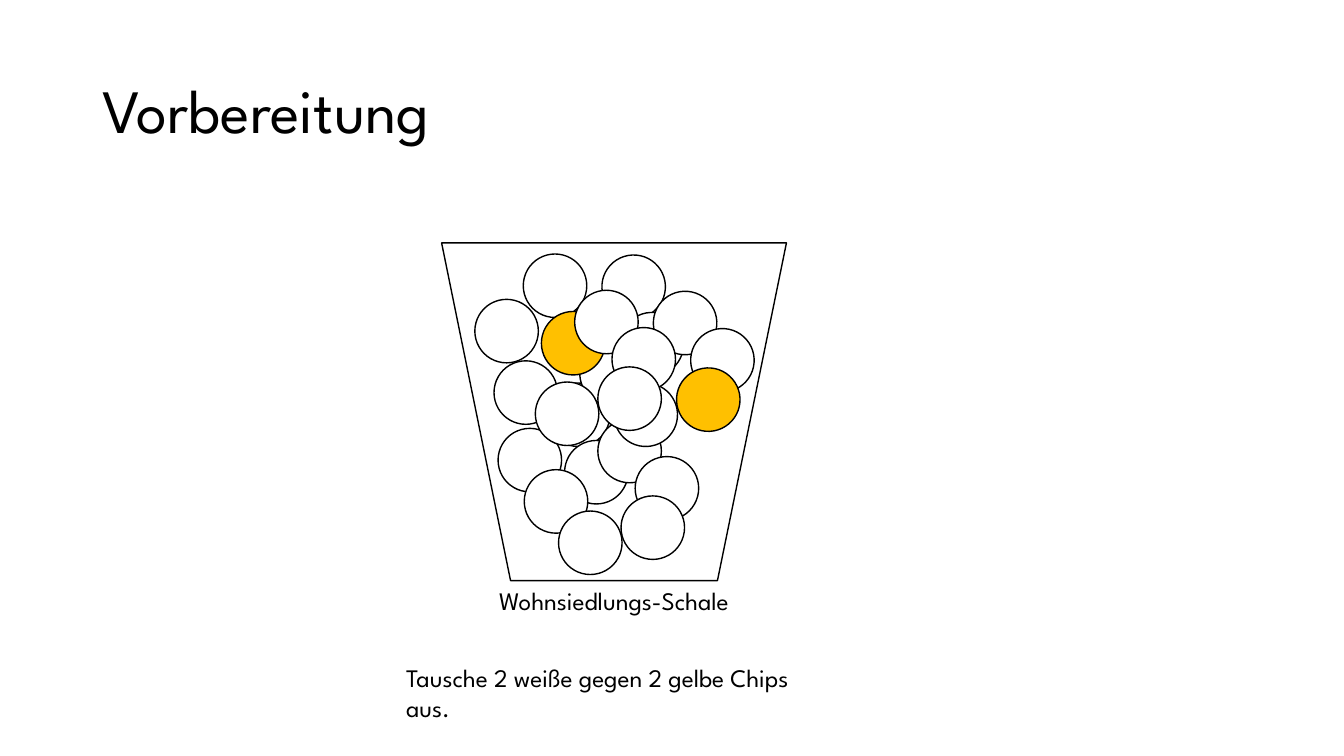
from dataclasses import dataclass

from pptx import Presentation
from pptx.dml.color import RGBColor
from pptx.enum.shapes import MSO_SHAPE
from pptx.enum.text import MSO_ANCHOR, PP_ALIGN
from pptx.util import Inches, Pt


@dataclass(frozen=True)
class Theme:
    """Colours, font and sizes of the slide."""
    ink: RGBColor = RGBColor(0x00, 0x00, 0x00)
    white: RGBColor = RGBColor(0xFF, 0xFF, 0xFF)
    yellow: RGBColor = RGBColor(0xFF, 0xC0, 0x00)
    font: str = "League Spartan"
    title_size: int = 44
    body_size: int = 18
    outline: int = 1


THEME = Theme()
CHIP_SIZE = 0.63
CLUSTER = [(0.48, 0), (0, 0.45), (0.66, 0.57), (0.99, 0.36),
           (0.26, 0.86), (1.36, 0.73), (1.22, 1.12), (0.6, 1.27)]
FRONT_CLUSTER = CLUSTER[:4] + [(0.19, 1.06)] + CLUSTER[5:]


def add_label(slide, box, words, size, align=PP_ALIGN.LEFT,
              anchor=MSO_ANCHOR.TOP, spacing=None):
    """Write one wrapped paragraph into the box."""
    frame = slide.shapes.add_textbox(*map(Inches, box)).text_frame
    frame.word_wrap = True
    frame.vertical_anchor = anchor
    paragraph = frame.paragraphs[0]
    paragraph.alignment = align
    paragraph.line_spacing = spacing
    run = paragraph.add_run()
    run.text = words
    run.font.name = THEME.font
    run.font.size = Pt(size)
    run.font.color.rgb = THEME.ink


def add_outlined(slide, kind, box, fill=None):
    """Draw a thinly outlined shape, filled only if a colour is given."""
    outlined = slide.shapes.add_shape(kind, *map(Inches, box))
    outlined.shadow.inherit = False
    if fill is None:
        outlined.fill.background()
    else:
        outlined.fill.solid()
        outlined.fill.fore_color.rgb = fill
    outlined.line.color.rgb = THEME.ink
    outlined.line.width = Pt(THEME.outline)
    return outlined


def add_chips(slide, left, top, offsets, yellow_chip=None, rotation=0):
    """Heap one cluster of chips from its top left corner."""
    for number, (dx, dy) in enumerate(offsets):
        colour = THEME.yellow if number == yellow_chip else THEME.white
        chip = add_outlined(slide, MSO_SHAPE.OVAL,
                            (left + dx, top + dy, CHIP_SIZE, CHIP_SIZE), colour)
        chip.rotation = rotation


def add_bowl(slide, box):
    """Draw the bowl, its three clusters of chips and its caption."""
    left, top, width, height = box
    add_outlined(slide, MSO_SHAPE.FLOWCHART_MANUAL_OPERATION, box)
    add_chips(slide, left + 0.56, top + 1.39, CLUSTER)
    add_chips(slide, left + 1.11, top + 0.12, CLUSTER, 6, 64.7)
    add_chips(slide, left + 0.33, top + 0.11, FRONT_CLUSTER, 2)
    add_label(slide, (left + 0.43, top + height, width - 0.86, 0.71),
              "Wohnsiedlungs-Schale", THEME.body_size, PP_ALIGN.CENTER)


def build_preparation(slide):
    """Place title, bowl and instruction."""
    add_label(slide, (0.92, 0.4, 11.5, 1.45), "Vorbereitung",
              THEME.title_size, anchor=MSO_ANCHOR.MIDDLE, spacing=0.9)
    add_bowl(slide, (4.38, 2.41, 3.42, 3.35))
    add_label(slide, (3.93, 6.52, 4.46, 0.4),
              "Tausche 2 weiße gegen 2 gelbe Chips aus.", THEME.body_size)


def main():
    """Build and save the presentation."""
    deck = Presentation()
    deck.slide_width = Inches(13.33)
    deck.slide_height = Inches(7.5)
    build_preparation(deck.slides.add_slide(deck.slide_layouts[6]))
    deck.save("out.pptx")


if __name__ == "__main__":
    main()
